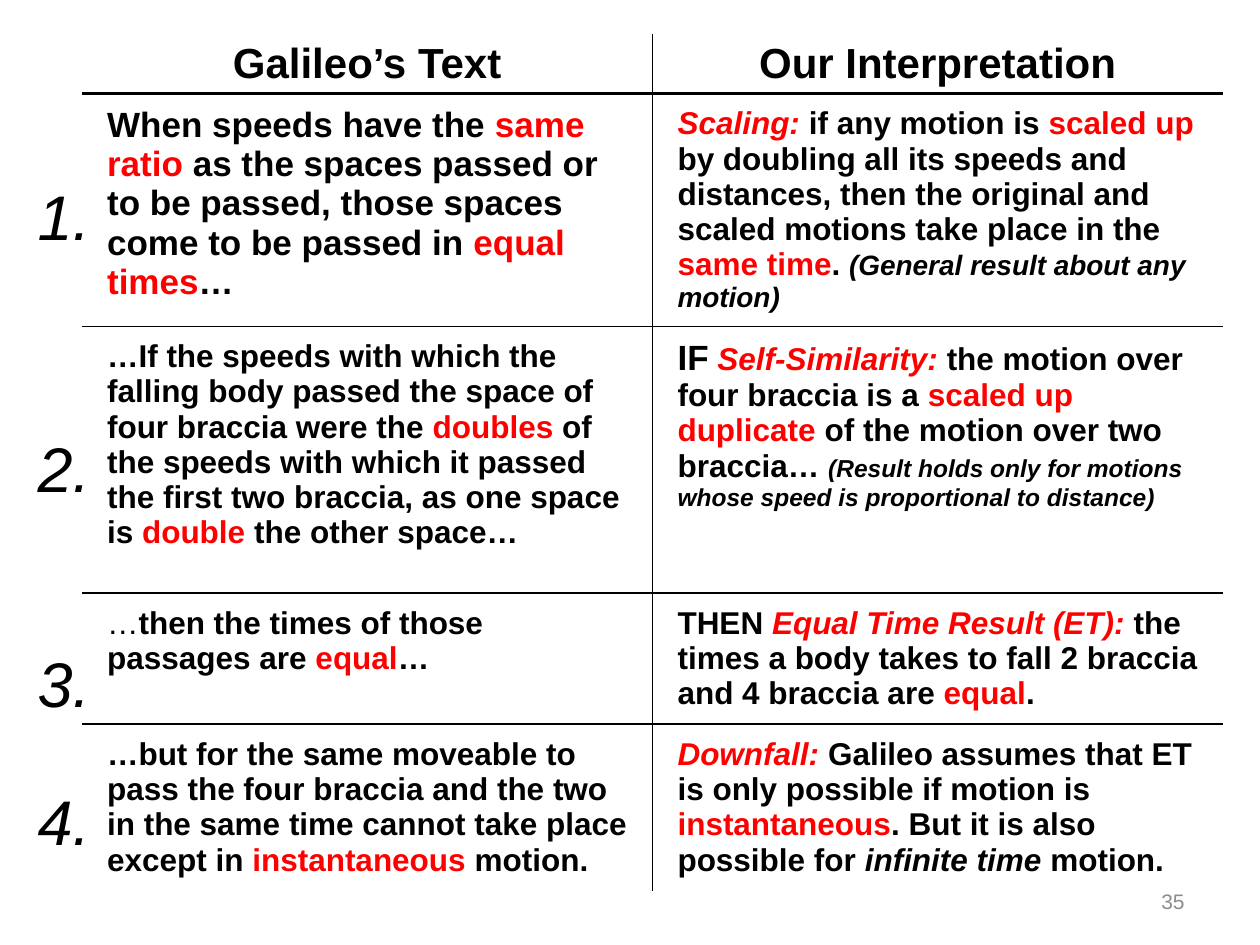
"""Build a slide comparing Galileo's text with an interpretation of it."""
from lxml import etree
from pptx import Presentation
from pptx import util as u
from pptx.dml import color
from pptx.enum import text
from pptx.oxml import ns

FONT, BLACK, RED, GREY = "Arial", "000000", "FF0000", "8C8C8C"
HEADERS = ["Galileo’s Text", "Our Interpretation"]
ROW_HEIGHTS = [33, 113, 152.5, 67, 85]
ROWS = [
    [(20, [("When speeds have the ", "b"), ("same ratio ", "br"),
           ("as the spaces passed or to be passed, those spaces come to be passed in ", "b"),
           ("equal times", "br"), ("…", "b")]),
     (18, [("Scaling: ", "bri"), ("if any motion is ", "b"), ("scaled up", "br"),
           (" by doubling all its speeds and distances, then the original and "
            "scaled motions take place in the ", "b"),
           ("same time", "br"), (". ", "b"),
           ("(General result about any motion)", "bi", 16)])],
    [(18, [("…If the speeds with which the falling body passed the space of "
            "four braccia were the ", "b"), ("doubles ", "br"),
           ("of the speeds with which it passed the first two braccia, as one space is ", "b"),
           ("double ", "br"), ("the other space…", "b")]),
     (18, [("IF", "b", 20), (" ", "b"), ("Self-Similarity: ", "bri"),
           ("the motion over four braccia is a ", "b"), ("scaled up duplicate ", "br"),
           ("of the motion over two braccia… ", "b"),
           ("(Result holds only for motions whose speed is proportional to distance)",
            "bi", 14)])],
    [(18, [("…", ""), ("then the times of those passages are ", "b"),
           ("equal", "br"), ("…", "b")]),
     (18, [("THEN ", "b"), ("Equal Time Result (ET):", "bri"),
           (" the times a body takes to fall 2 braccia and 4 braccia are ", "b"),
           ("equal", "br"), (".", "b")])],
    [(18, [("…but for the same moveable to pass the four braccia and the two in "
            "the same time cannot take place except in ", "b"),
           ("instantaneous ", "br"), ("motion.", "b")]),
     (18, [("Downfall: ", "bri"),
           ("Galileo assumes that ET is only possible if motion is ", "b"),
           ("instantaneous", "br"), (". But it is also possible for", "b"),
           (" infinite time", "bi"), (" motion.", "b")])],
]
NUMBER_TOPS = [98, 242, 364.5, 443.5]


def set_font(font, size, hex_color=BLACK, bold=False, italic=False):
    font.name, font.size = FONT, u.Pt(size)
    font.bold, font.italic = bold, italic
    font.color.rgb = color.RGBColor.from_string(hex_color)


def set_border(cell, side, width):
    tcPr = cell._tc.get_or_add_tcPr()
    ln = etree.SubElement(tcPr, ns.qn(f"a:ln{side}"), w=str(u.Pt(width)))
    if width:
        fill = etree.SubElement(ln, ns.qn("a:solidFill"))
        etree.SubElement(fill, ns.qn("a:srgbClr"), val=BLACK)
    else:
        etree.SubElement(ln, ns.qn("a:noFill"))


def style_cell(cell, row, col):
    widths = {
        "L": 1 if col else 0,
        "R": 0 if col else 1,
        "T": [0, 2, 1, 1, 1][row],
        "B": [2, 1, 1, 1, 0][row],
    }
    for side, width in widths.items():
        set_border(cell, side, width)
    cell.fill.background()


def fill_header(cell, label):
    p = cell.text_frame.paragraphs[0]
    p.text, p.alignment = label, text.PP_ALIGN.CENTER
    set_font(p.font, 24, bold=True)


def fill_body(cell, size, runs):
    cell.margin_left = cell.margin_right = u.Pt(14.4)
    cell.margin_top = cell.margin_bottom = u.Pt(7.2)
    p = cell.text_frame.paragraphs[0]
    for words, style, *own_size in runs:
        r = p.add_run()
        r.text = words
        set_font(r.font, own_size[0] if own_size else size,
                 RED if "r" in style else BLACK, "b" in style, "i" in style)


def add_comparison(s):
    frame = s.shapes.add_table(len(ROW_HEIGHTS), 2, u.Pt(46.8), u.Pt(19.5),
                               u.Pt(652), u.Pt(sum(ROW_HEIGHTS)))
    table = frame.table
    table.first_row = table.horz_banding = False
    for row, height in zip(table.rows, ROW_HEIGHTS):
        row.height = u.Pt(height)
    for col, label in enumerate(HEADERS):
        table.columns[col].width = u.Pt(326)
        fill_header(table.cell(0, col), label)
        for row, contents in enumerate(ROWS, 1):
            fill_body(table.cell(row, col), *contents[col])
        for row in range(len(ROW_HEIGHTS)):
            style_cell(table.cell(row, col), row, col)


def add_label(s, box, words, size, hex_color=BLACK, italic=False, wrap=True):
    tf = s.shapes.add_textbox(*map(u.Pt, box)).text_frame
    tf.word_wrap = wrap
    p = tf.paragraphs[0]
    p.text = words
    set_font(p.font, size, hex_color, italic=italic)
    return tf


def main():
    prs = Presentation()
    prs.slide_width, prs.slide_height = u.Pt(720), u.Pt(540)
    s = prs.slides.add_slide(prs.slide_layouts[6])
    add_comparison(s)
    for number, top in enumerate(NUMBER_TOPS, 1):
        tf = add_label(s, (14.4, top, 54, 51), f"{number}.", 36, italic=True, wrap=False)
        tf.auto_size = text.MSO_AUTO_SIZE.SHAPE_TO_FIT_TEXT
    tf = add_label(s, (516, 500.5, 168, 28.75), "35", 12, GREY)
    tf.vertical_anchor = text.MSO_ANCHOR.MIDDLE
    tf.paragraphs[0].alignment = text.PP_ALIGN.RIGHT
    prs.save("out.pptx")


if __name__ == "__main__":
    main()
